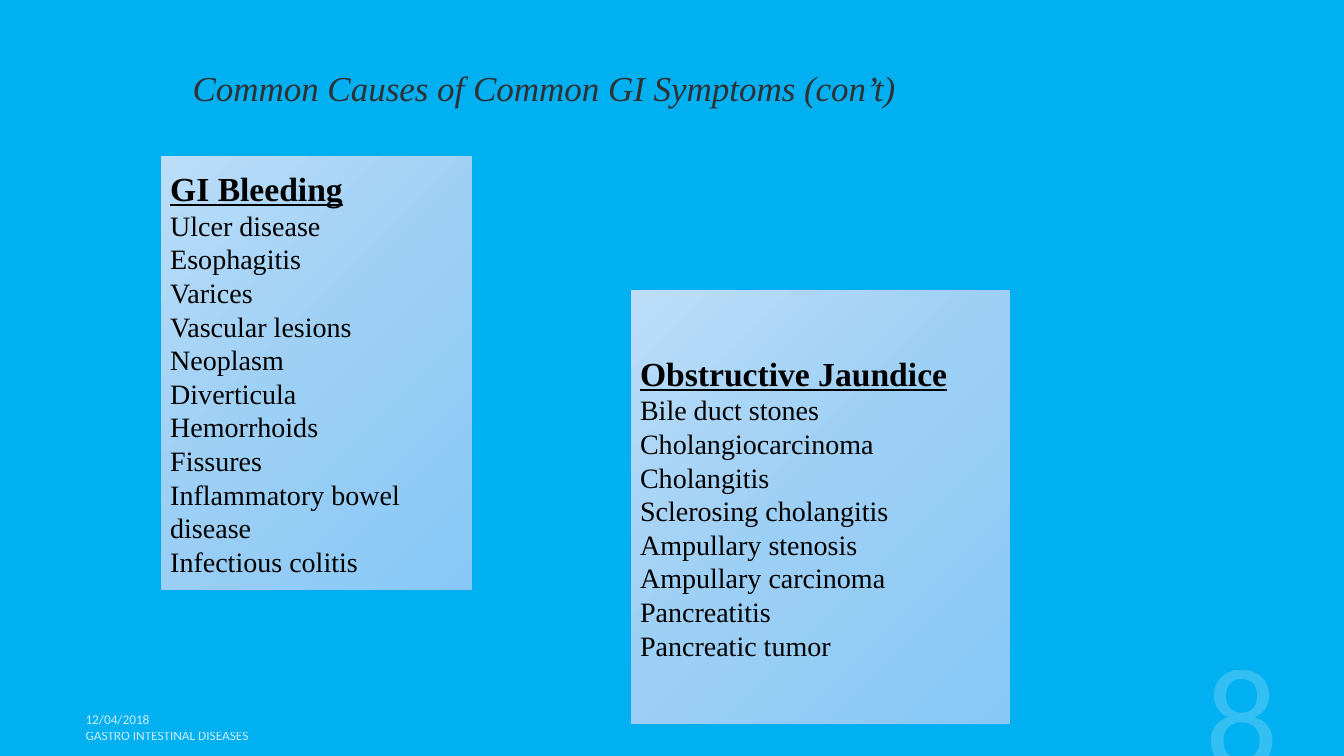
from lxml import etree
from copy import deepcopy

from pptx import Presentation
from pptx.dml.color import RGBColor
from pptx.enum.shapes import MSO_SHAPE
from pptx.enum.text import MSO_ANCHOR, PP_ALIGN
from pptx.oxml.ns import qn
from pptx.util import Inches, Pt

RECTANGLE = MSO_SHAPE.RECTANGLE
LEFT, CENTER, RIGHT = PP_ALIGN.LEFT, PP_ALIGN.CENTER, PP_ALIGN.RIGHT
MIDDLE, BOTTOM = MSO_ANCHOR.MIDDLE, MSO_ANCHOR.BOTTOM

SKY = RGBColor(0x00, 0xB0, 0xF0)
OUTLINE = RGBColor(0x00, 0xAE, 0xEF)
PANEL_COLORS = [RGBColor(0xBB, 0xDD, 0xF8), RGBColor(0x9C, 0xCF, 0xF5),
                RGBColor(0x87, 0xC8, 0xF6)]
BLACK = RGBColor(0x00, 0x00, 0x00)
CHARCOAL = RGBColor(0x30, 0x30, 0x34)
WHITE = RGBColor(0xFF, 0xFF, 0xFF)

SERIF = "Times New Roman"
SANS = "Calibri"

BLEEDING_CAUSES = [
    "Ulcer disease", "Esophagitis", "Varices", "Vascular lesions", "Neoplasm",
    "Diverticula", "Hemorrhoids", "Fissures", "Inflammatory bowel disease",
    "Infectious colitis",
]
JAUNDICE_CAUSES = [
    "Bile duct stones", "Cholangiocarcinoma", "Cholangitis",
    "Sclerosing cholangitis", "Ampullary stenosis", "Ampullary carcinoma",
    "Pancreatitis", "Pancreatic tumor",
]


def write(paragraph, text, size, color, font=SERIF, align=LEFT, bold=False,
          italic=False, underline=False, opacity=100):
    paragraph.alignment = align
    run = paragraph.add_run()
    run.text = text
    run.font.name = font
    run.font.size = Pt(size)
    run.font.bold = bold
    run.font.italic = italic
    run.font.underline = underline
    run.font.color.rgb = color
    if opacity < 100:
        color_element = next(run._r.iter(qn("a:srgbClr")))
        etree.SubElement(color_element, qn("a:alpha"), val=str(opacity * 1000))


def fill_diagonally(shape, colors):
    """Fill from top left to bottom right with evenly spaced colours."""
    shape.fill.gradient()
    shape.fill.gradient_angle = 315
    stop_list = next(shape._element.spPr.iter(qn("a:gsLst")))
    while len(stop_list) < len(colors):
        stop_list.append(deepcopy(stop_list[0]))
    for index, (stop, color) in enumerate(zip(shape.fill.gradient_stops, colors)):
        stop.color.rgb = color
        stop.position = index / (len(colors) - 1)


def place_title(slide, text, left, top, width, height):
    title = slide.shapes.title
    title.left, title.top = Inches(left), Inches(top)
    title.width, title.height = Inches(width), Inches(height)
    frame = title.text_frame
    frame.word_wrap = False
    frame.vertical_anchor = MIDDLE
    write(frame.paragraphs[0], text, 25, CHARCOAL, align=CENTER, italic=True)


def add_cause_panel(slide, symptom, causes, left, top, width, height):
    panel = slide.shapes.add_shape(RECTANGLE, Inches(left), Inches(top),
                                   Inches(width), Inches(height))
    panel.shadow.inherit = False
    fill_diagonally(panel, PANEL_COLORS)
    panel.line.color.rgb = OUTLINE
    panel.line.width = Pt(0.75)
    frame = panel.text_frame
    frame.word_wrap = True
    frame.vertical_anchor = MIDDLE
    write(frame.paragraphs[0], symptom, 24, BLACK, bold=True, underline=True)
    for cause in causes:
        write(frame.add_paragraph(), cause, 20, BLACK)


def add_label(slide, text, left, top, width, height, anchor=MIDDLE, **text_format):
    label = slide.shapes.add_textbox(Inches(left), Inches(top),
                                     Inches(width), Inches(height))
    frame = label.text_frame
    frame.word_wrap = True
    frame.vertical_anchor = anchor
    write(frame.paragraphs[0], text, color=WHITE, font=SANS, **text_format)


def add_footer(slide, left, top):
    add_label(slide, "12/04/2018", left, top, 4.5, 0.25, size=9.5, opacity=80)
    add_label(slide, "GASTRO INTESTINAL DISEASES", left, top + 0.16, 5.5, 0.25,
              size=9.5, opacity=80)


def main():
    presentation = Presentation()
    presentation.slide_width = Inches(13.33)
    presentation.slide_height = Inches(7.5)
    slide = presentation.slides.add_slide(
        presentation.slide_layouts.get_by_name("Title Only"))
    slide.background.fill.solid()
    slide.background.fill.fore_color.rgb = SKY

    add_footer(slide, 0.75, 7.01)
    add_label(slide, "8", 9.58, 6.43, 3.2, 1.53, anchor=BOTTOM,
              size=103, align=RIGHT, opacity=20)
    place_title(slide, "Common Causes of Common GI Symptoms (con’t)",
                1.77, 0.61, 7.25, 0.52)
    add_cause_panel(slide, "GI Bleeding", BLEEDING_CAUSES, 1.59, 1.54, 3.1, 4.32)
    add_cause_panel(slide, "Obstructive Jaundice", JAUNDICE_CAUSES,
                    6.25, 2.87, 3.77, 4.32)
    presentation.save("out.pptx")


if __name__ == "__main__":
    main()
